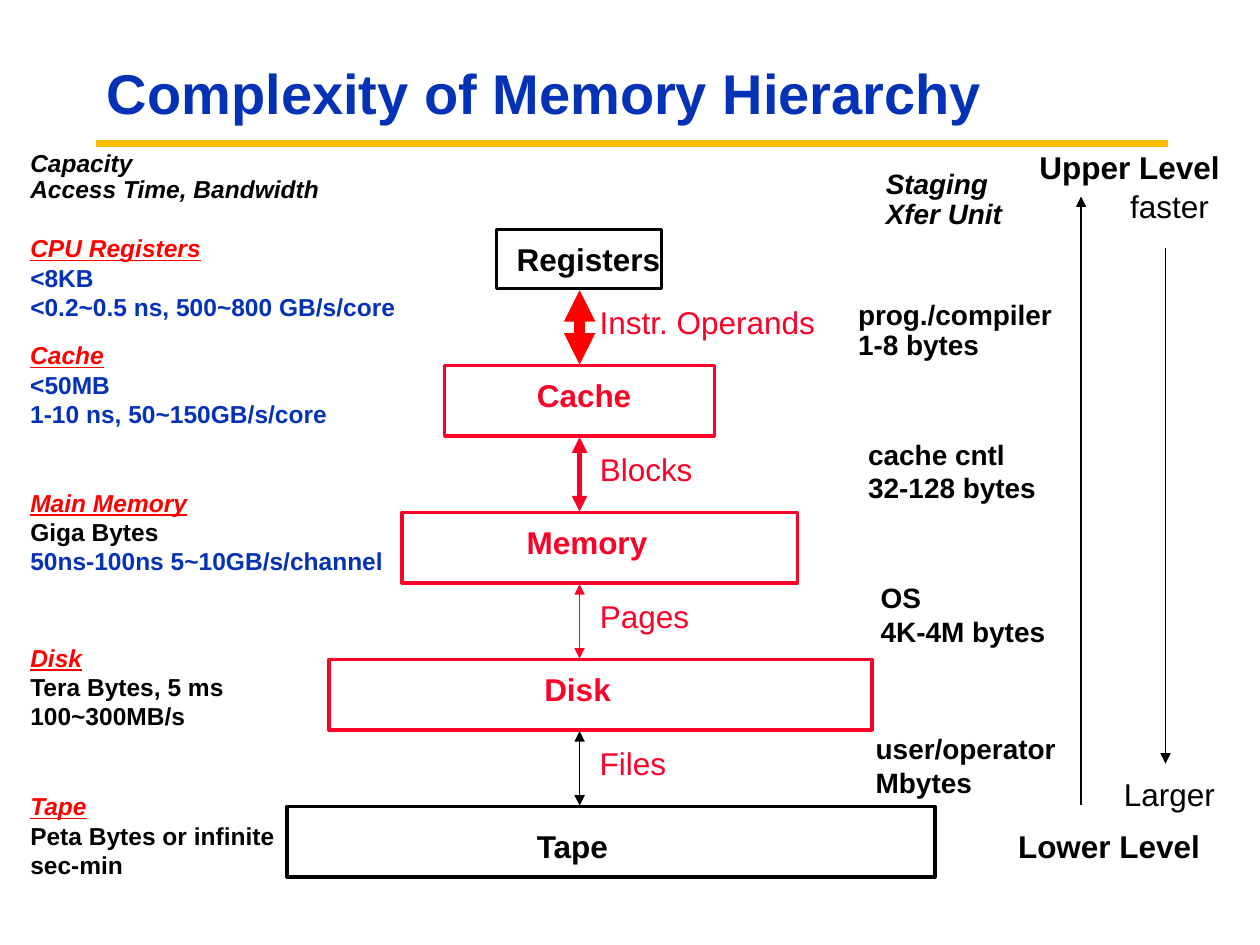
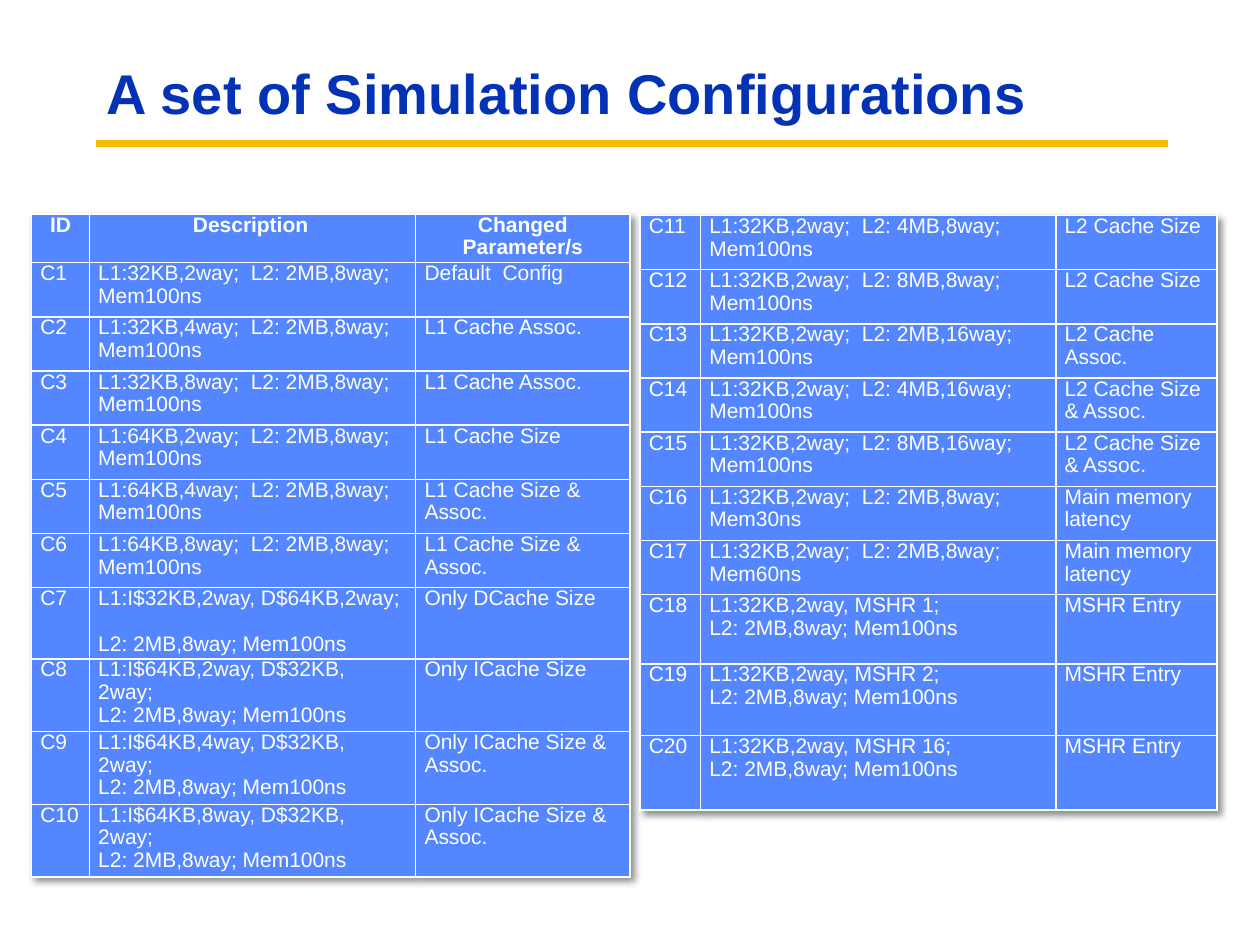
from lxml import etree
from pptx import Presentation
from pptx.dml.color import RGBColor
from pptx.enum.shapes import MSO_CONNECTOR, MSO_SHAPE
from pptx.enum.text import MSO_ANCHOR, PP_ALIGN
from pptx.oxml.ns import qn
from pptx.util import Inches, Pt

LINE = MSO_CONNECTOR.STRAIGHT
RECT = MSO_SHAPE.RECTANGLE
MID = MSO_ANCHOR.MIDDLE
LEFT, CENTER = PP_ALIGN.LEFT, PP_ALIGN.CENTER

FONT = "Arial"
COLORS = {
    "title": "0332B7",
    "rule": "FBBA03",
    "ink": "000000",
    "red": "FF0000",
    "rose": "FC0128",
    "cell": "5486FF",
    "white": "FFFFFF",
}
SLACK = 0.1  # spare width that keeps each line of a label whole
STEP = 3.5 / 3  # distance from one memory level to the next
TOP = 2.9 - STEP

# name, name left, name width, box left, box width, color
LEVELS = [
    ("Registers", 4.03, 1.28, 3.94, 1.31, "ink"),
    ("Cache", 4.19, 0.89, 3.53, 2.14, "rose"),
    ("Memory", 4.11, 1.1, 3.19, 3.14, "rose"),
    ("Disk", 4.25, 0.67, 2.61, 4.31, "rose"),
    ("Tape", 4.19, 0.72, 2.28, 5.14, "ink"),
]
# unit moved, text width, arrow color, arrow weight
MOVES = [
    ("Instr. Operands", 1.86, "red", 6),
    ("Blocks", 0.88, "rose", 3),
    ("Pages", 0.85, "rose", 1),
    ("Files", 0.67, "ink", 1),
]
# top, width, heading, then lines with their colors
FACTS = [
    (1.82, 3.05, "CPU Registers",
     ("<8KB", "title"), ("<0.2~0.5 ns, 500~800 GB/s/core", "title")),
    (2.67, 2.56, "Cache",
     ("<50MB", "title"), ("1-10 ns, 50~150GB/s/core", "title")),
    (3.84, 2.95, "Main Memory",
     ("Giga Bytes", "ink"), ("50ns-100ns 5~10GB/s/channel", "title")),
    (5.07, 2.38, "Disk",
     ("Tera Bytes, 5 ms", "ink"), ("100~300MB/s", "ink")),
    (6.25, 2.08, "Tape",
     ("Peta Bytes or infinite", "ink"), ("sec-min", "ink")),
]
# box, then lines with their line spacing
UNITS = [
    ((6.74, 2.36, 1.7, 0.54), ("prog./compiler", 0.9), ("1-8 bytes", 0.9)),
    ((6.82, 3.44, 1.49, 0.6), ("cache cntl", 1), ("32-128 bytes", 1)),
    ((6.92, 4.61, 1.46, 0.57), ("OS", 0.9), ("4K-4M bytes", 1)),
    ((6.88, 5.78, 1.59, 0.6), ("user/operator", 1), ("Mbytes", 1)),
]
ENDS = [
    ((8.18, 1.19, 1.57, 0.31), "Upper Level", True),
    ((8.01, 6.58, 1.58, 0.31), "Lower Level", True),
    ((8.9, 1.5, 0.76, 0.31), "faster", False),
    ((8.85, 6.17, 0.86, 0.31), "Larger", False),
]

MEM = "L2: 2MB,8way; Mem100ns"
HEAD = ("ID", "Description", "Changed Parameter/s")
BASE = [
    ("L1:32KB,2way;  " + MEM, "Default  Config"),
    ("L1:32KB,4way;  " + MEM, "L1 Cache Assoc."),
    ("L1:32KB,8way;  " + MEM, "L1 Cache Assoc."),
    ("L1:64KB,2way;  " + MEM, "L1 Cache Size"),
    ("L1:64KB,4way;  " + MEM, "L1 Cache Size & Assoc."),
    ("L1:64KB,8way;  " + MEM, "L1 Cache Size & Assoc."),
    ("L1:I$32KB,2way, D$64KB,2way;\n" + MEM, "Only DCache Size"),
    ("L1:I$64KB,2way, D$32KB, 2way;\n" + MEM, "Only ICache Size"),
    ("L1:I$64KB,4way, D$32KB, 2way;\n" + MEM, "Only ICache Size & Assoc."),
    ("L1:I$64KB,8way, D$32KB, 2way;\n" + MEM, "Only ICache Size & Assoc."),
]
MORE = [
    ("L1:32KB,2way;  L2: 4MB,8way; Mem100ns", "L2 Cache Size"),
    ("L1:32KB,2way;  L2: 8MB,8way; Mem100ns", "L2 Cache Size"),
    ("L1:32KB,2way;  L2: 2MB,16way; Mem100ns", "L2 Cache Assoc."),
    ("L1:32KB,2way;  L2: 4MB,16way; Mem100ns", "L2 Cache Size & Assoc."),
    ("L1:32KB,2way;  L2: 8MB,16way; Mem100ns", "L2 Cache Size & Assoc."),
    ("L1:32KB,2way;  L2: 2MB,8way; Mem30ns", "Main memory latency"),
    ("L1:32KB,2way;  L2: 2MB,8way; Mem60ns", "Main memory latency"),
    ("L1:32KB,2way, MSHR 1;\n" + MEM, "MSHR Entry"),
    ("L1:32KB,2way, MSHR 2;\n" + MEM, "MSHR Entry"),
    ("L1:32KB,2way, MSHR 16;\n" + MEM, "MSHR Entry"),
]


def rgb(name):
    return RGBColor.from_string(COLORS[name])


def inches(nums):
    return [Inches(n) for n in nums]


def write(para, words, size, color="ink", bold=False, italic=False,
          under=False, lead=1):
    if lead != 1:
        para.line_spacing = lead
    run = para.add_run()
    run.text = words
    font = run.font
    font.name, font.size = FONT, Pt(size)
    font.bold, font.italic, font.underline = bold, italic, under
    font.color.rgb = rgb(color)


def add_text(slide, box, size, lines, pad=(0.07, 0.03), anchor=None):
    """Put each (words, style) line in a paragraph of its own."""
    left, top, width, height = box
    spot = inches((left, top, width + SLACK, height))
    frame = slide.shapes.add_textbox(*spot).text_frame
    frame.word_wrap = True
    frame.margin_left = frame.margin_right = Inches(pad[0])
    frame.margin_top = frame.margin_bottom = Inches(pad[1])
    if anchor is not None:
        frame.vertical_anchor = anchor
    for i, (words, style) in enumerate(lines):
        para = frame.add_paragraph() if i else frame.paragraphs[0]
        write(para, words, size, **style)


def add_tag(slide, box, words, color="ink", bold=False):
    add_text(slide, box, 18,
             [(words, {"color": color, "bold": bold, "lead": 0.85})])


def add_box(slide, box, color):
    shape = slide.shapes.add_shape(RECT, *inches(box))
    shape.shadow.inherit = False
    shape.fill.background()
    shape.line.color.rgb = rgb(color)
    shape.line.width = Pt(2)


def add_line(slide, ends, color, weight, heads=()):
    """Draw a line; heads may hold headEnd (start) and tailEnd (finish)."""
    link = slide.shapes.add_connector(LINE, *inches(ends))
    link.line.color.rgb = rgb(color)
    link.line.width = Pt(weight)
    stroke = link.line._get_or_add_ln()
    for head in heads:
        etree.SubElement(stroke, qn("a:" + head), type="triangle")
    etree.SubElement(link._element.spPr, qn("a:effectLst"))


def add_slide(deck, title):
    slide = deck.slides.add_slide(deck.slide_layouts[6])
    add_line(slide, (0.76, 1.14, 9.27, 1.14), "rule", 3.75)
    style = {"color": "title", "bold": True, "lead": 0.9}
    add_text(slide, (0.75, 0.36, 8.58, 0.81), 32, [(title, style)],
             (0.1, 0.05), MID)
    return slide


def add_shade(table):
    """Cast a soft shadow to the lower right of a table."""
    props = table._tbl.tblPr
    effects = etree.Element(qn("a:effectLst"))
    shade = etree.SubElement(effects, qn("a:outerShdw"), blurRad="50800",
                             dist="38100", dir="2700000")
    tint = etree.SubElement(shade, qn("a:srgbClr"), val=COLORS["ink"])
    etree.SubElement(tint, qn("a:alpha"), val="43000")
    props.insert(0, effects)


def edge_cell(cell):
    props = cell._tc.get_or_add_tcPr()
    for i, side in enumerate(("lnL", "lnR", "lnT", "lnB")):
        edge = etree.Element(qn("a:" + side), w=str(Pt(1)))
        fill = etree.SubElement(edge, qn("a:solidFill"))
        etree.SubElement(fill, qn("a:srgbClr"), val=COLORS["white"])
        props.insert(i, edge)


def fill_cell(cell, words, head, gap, right):
    cell.margin_left, cell.margin_right = Inches(0.07), Inches(right)
    cell.margin_top = cell.margin_bottom = 0
    cell.fill.solid()
    cell.fill.fore_color.rgb = rgb("cell")
    edge_cell(cell)
    for i, line in enumerate(words.split("\n")):
        frame = cell.text_frame
        para = frame.add_paragraph() if i else frame.paragraphs[0]
        para.alignment = CENTER if head else LEFT
        if i and gap:
            para.space_before = Pt(gap)
        write(para, line, 12, "white", head, lead=0.96)


def add_grid(slide, spot, rows, widths, heights):
    size = (sum(widths), sum(heights))
    frame = slide.shapes.add_table(len(rows), len(widths),
                                   *inches(spot + size))
    table = frame.table
    table.first_row = rows[0] == HEAD
    table.horz_banding = False
    add_shade(table)
    for col, width in zip(table.columns, widths):
        col.width = Inches(width)
    for r, (row, height) in enumerate(zip(rows, heights)):
        table.rows[r].height = Inches(height)
        gap = 13 if row[0] == "C7" else 0
        for c, words in enumerate(row):
            right = 0.1 if c == 1 else 0.07
            fill_cell(table.cell(r, c), words, row == HEAD, gap, right)


def number(rows, start):
    return [(f"C{i}",) + row for i, row in enumerate(rows, start)]


def draw_levels(slide):
    for i, (name, left, width, edge, span, color) in enumerate(LEVELS):
        top, tall = TOP + i * STEP, 0.56
        if name == "Registers":
            top, tall = 1.82, 0.47
        drop = 0.18 if name == "Tape" else 0.1
        add_box(slide, (edge, top, span, tall), color)
        add_tag(slide, (left, top + drop, width, 0.31), name, color, True)
    for i, (unit, width, color, weight) in enumerate(MOVES):
        top = TOP + i * STEP
        add_line(slide, (4.6, top + 0.57, 4.6, top + 1.16), color, weight,
                 ("headEnd", "tailEnd"))
        add_tag(slide, (4.69, top + 0.69, width, 0.31), unit, "rose")


def draw_notes(slide):
    slant = {"bold": True, "italic": True}
    tight = {**slant, "lead": 0.9}
    add_text(slide, (0.17, 1.17, 2.71, 0.69), 14,
             [("Capacity", tight), ("Access Time, Bandwidth", tight)])
    add_text(slide, (6.96, 1.29, 1.08, 0.57), 16,
             [("Staging", slant), ("Xfer Unit", tight)])
    for top, width, name, *lines in FACTS:
        parts = [(name, {**slant, "color": "red", "under": True})]
        parts += [(words, {"color": color, "bold": True})
                  for words, color in lines]
        add_text(slide, (0.17, top, width, 0.76), 14, parts)
    for box, *lines in UNITS:
        add_text(slide, box, 16, [(words, {"bold": True, "lead": lead})
                                  for words, lead in lines])


def draw_scale(slide):
    for box, words, bold in ENDS:
        add_tag(slide, box, words, bold=bold)
    for ends in ((8.58, 6.39, 8.58, 1.56), (9.25, 1.97, 9.25, 6.06)):
        add_line(slide, ends, "ink", 1, ("tailEnd",))


def main():
    deck = Presentation()
    deck.slide_width, deck.slide_height = Inches(10), Inches(7.5)

    slide = add_slide(deck, "Complexity of Memory Hierarchy")
    draw_levels(slide)
    draw_notes(slide)
    draw_scale(slide)

    slide = add_slide(deck, "A set of Simulation Configurations")
    add_grid(slide, (0.25, 1.7), [HEAD] + number(BASE, 1),
             (0.46, 2.59, 1.7), [0.37] + [0.43] * 6 + [0.56] * 4)
    add_grid(slide, (5.08, 1.71), number(MORE, 11),
             (0.48, 2.82, 1.28), [0.43] * 7 + [0.55, 0.57, 0.59])
    deck.save("out.pptx")


if __name__ == "__main__":
    main()
